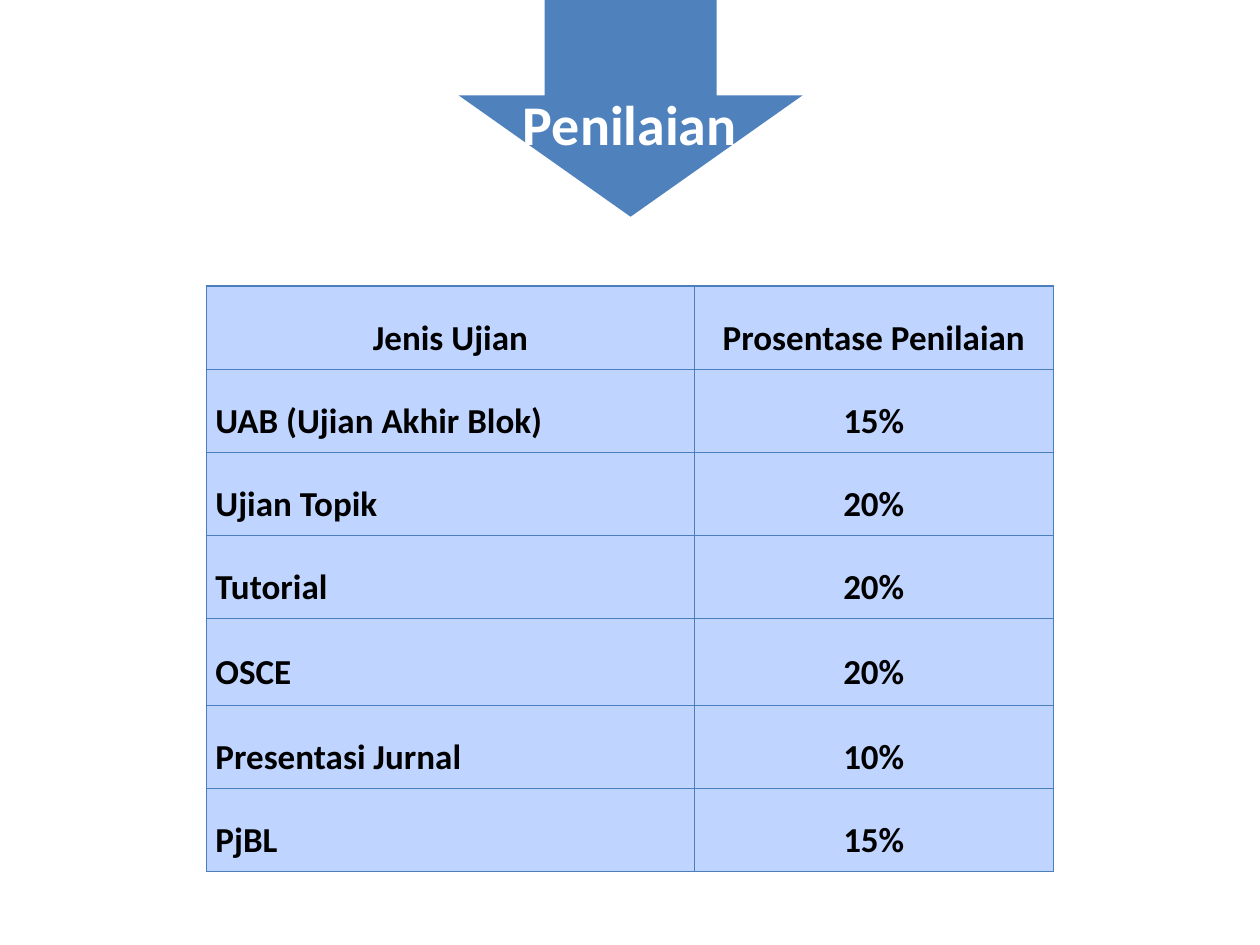
from dataclasses import dataclass

from lxml.etree import SubElement
from pptx import Presentation
from pptx.dml.color import RGBColor
from pptx.enum.shapes import MSO_SHAPE as Shape
from pptx.enum.text import MSO_ANCHOR as Anchor, PP_ALIGN as Align
from pptx.oxml.ns import qn
from pptx.slide import Slide
from pptx.util import Inches, Pt


def color(code):
    """Turn a hex string into a colour."""
    return RGBColor.from_string(code)


@dataclass
class SlideBuilder:
    """Hold the style and the current slide."""

    page: Slide
    font: str = "Calibri"
    accent: str = "4F81BD"
    border: str = "4B7EBC"
    cell_fill: str = "BFD4FF"

    def label(self, frame, text, size, ink, align):
        """Put one bold paragraph into a text frame."""
        frame.text = text
        para = frame.paragraphs[0]
        para.alignment = align
        para.font.name = self.font
        para.font.size = Pt(size)
        para.font.bold = True
        para.font.color.rgb = color(ink)
        return para

    def title(self, text, left, top, width, height):
        """Place and format the title placeholder."""
        title = self.page.shapes.title
        title.left, title.top = Inches(left), Inches(top)
        title.width, title.height = Inches(width), Inches(height)
        title.text_frame.vertical_anchor = Anchor.MIDDLE
        self.label(title.text_frame, text, 32, "FFFFFF", Align.CENTER)

    def arrow_behind_title(self, left, top, width, height):
        """Draw the down arrow underneath the title."""
        arrow = self.page.shapes.add_shape(
            Shape.DOWN_ARROW, Inches(left), Inches(top), Inches(width), Inches(height)
        )
        arrow.adjustments[0] = 0.5
        arrow.adjustments[1] = 0.56
        arrow.shadow.inherit = False
        arrow.fill.solid()
        arrow.fill.fore_color.rgb = color(self.accent)
        arrow.line.fill.background()
        self.page.shapes.title.element.addprevious(arrow.element)

    def outline(self, cell):
        """Draw thin lines on all four sides of a cell."""
        properties = cell._tc.get_or_add_tcPr()
        for side in ("a:lnL", "a:lnR", "a:lnT", "a:lnB"):
            line = SubElement(properties, qn(side), w=str(Pt(0.75)))
            fill = SubElement(line, qn("a:solidFill"))
            SubElement(fill, qn("a:srgbClr"), val=self.border)

    def cell(self, cell, text, align):
        """Fill, outline and label one table cell."""
        cell.margin_left = cell.margin_right = Inches(0.07)
        cell.margin_top = cell.margin_bottom = 0
        cell.vertical_anchor = Anchor.MIDDLE
        self.outline(cell)
        cell.fill.solid()
        cell.fill.fore_color.rgb = color(self.cell_fill)
        para = self.label(cell.text_frame, text, 20, "000000", align)
        para.line_spacing = 1.5

    def table(self, rows, left, top, widths, heights):
        """Add a table with a centred header and centred values."""
        table = self.page.shapes.add_table(
            len(rows), len(widths), Inches(left), Inches(top),
            Inches(sum(widths)), Inches(sum(heights)),
        ).table
        for column, width in zip(table.columns, widths):
            column.width = Inches(width)
        for row, height in zip(table.rows, heights):
            row.height = Inches(height)
        for r, texts in enumerate(rows):
            for c, text in enumerate(texts):
                align = Align.LEFT if r and not c else Align.CENTER
                self.cell(table.cell(r, c), text, align)


def main():
    """Build and save the grading slide."""
    deck = Presentation()
    deck.slide_width, deck.slide_height = Inches(10), Inches(7.5)
    builder = SlideBuilder(deck.slides.add_slide(deck.slide_layouts[5]))
    builder.title("Penilaian", 0.5, 0.35, 9, 1.25)
    builder.arrow_behind_title(3.64, 0, 2.73, 1.72)
    grades = [
        ("Jenis Ujian", "Prosentase Penilaian"),
        ("UAB (Ujian Akhir Blok)", "15%"),
        ("Ujian Topik", "20%"),
        ("Tutorial", "20%"),
        ("OSCE", "20%"),
        ("Presentasi Jurnal", "10%"),
        ("PjBL", "15%"),
    ]
    heights = [0.69 if name == "OSCE" else 0.66 for name, share in grades]
    builder.table(grades, 1.64, 2.27, [3.87, 2.85], heights)
    deck.save("out.pptx")


if __name__ == "__main__":
    main()
